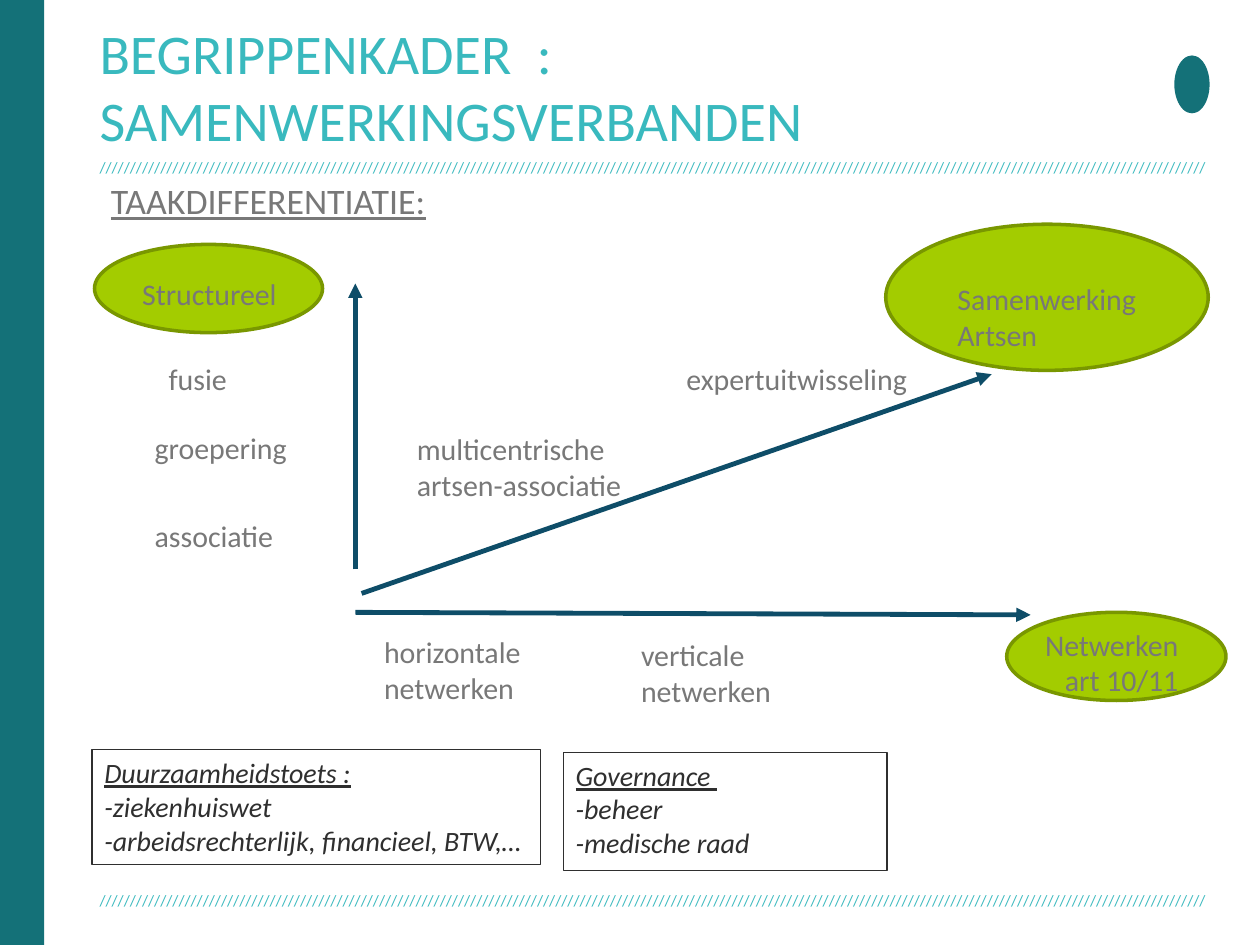
import pptx
import pptx.util
import pptx.dml.color
import pptx.enum.shapes
import pptx.enum.text
import pptx.oxml
import pptx.oxml.ns

Inches, Pt = pptx.util.Inches, pptx.util.Pt
SHAPE = pptx.enum.shapes.MSO_SHAPE
ANCHOR = pptx.enum.text.MSO_ANCHOR
ALIGN = pptx.enum.text.PP_ALIGN

COLORS = {"teal": "147178", "aqua": "39B9BE", "gray": "787878", "dark": "2F2F2F",
          "lime": "A3CC00", "olive": "799700", "navy": "0E4D68"}
FONT = "Calibri"
LABEL_SIZE = 17.1
HATCH = "/" * 182

# left, top, width, height
HATCH_ROWS = [(0.79, 7.07, 8.9, 0.3), (0.79, 1.25, 8.9, 0.25)]
HEADINGS = [
    ("BEGRIPPENKADER  : SAMENWERKINGSVERBANDEN", (0.79, 0.13, 8.35, 1.1),
     dict(size=32, color="aqua")),
    ("TAAKDIFFERENTIATIE:", (0.88, 1.15, 5.9, 0.88), dict(size=20.5, underline=True)),
]
ELLIPSES = [(7.99, 4.86, 1.74, 0.7), (0.75, 1.94, 1.81, 0.7), (7.03, 1.78, 2.56, 1.16)]
ARROWS = [
    ((2.82, 4.86), (8.18, 4.88)),
    ((2.82, 4.52), (2.82, 2.25)),
    ((2.87, 4.71), (7.87, 2.97)),
]
LABELS = [
    ("Structureel", (1.03, 2.14, 1.8, 0.39)),
    ("fusie", (1.24, 2.81, 0.92, 0.39)),
    ("groepering", (1.13, 3.36, 2.53, 0.39)),
    ("associatie", (1.13, 4.06, 1.27, 0.39)),
    ("horizontale netwerken", (2.95, 4.98, 1.68, 0.68)),
    ("verticale\nnetwerken", (4.99, 5, 2.56, 0.68)),
    ("multicentrische\nartsen-associatie", (3.21, 3.37, 2.53, 0.68)),
    ("expertuitwisseling", (5.35, 2.81, 2.53, 0.39)),
    ("Samenwerking\nArtsen", (7.5, 2.18, 2.09, 0.68)),
]
NETWORK_LABEL = ("Netwerken\nart 10/11", (8.03, 4.92, 1.42, 0.68))
NOTES = [
    ("Duurzaamheidstoets :\n-ziekenhuiswet\n-arbeidsrechterlijk, financieel, BTW,…",
     (0.73, 5.95, 3.56, 0.91)),
    ("Governance \n-beheer\n-medische raad", (4.47, 5.97, 2.57, 0.94)),
]


def rgb(name):
    return pptx.dml.color.RGBColor.from_string(COLORS[name])


def write(sp, text, size=LABEL_SIZE, color="gray", italic=False, underline=False,
          align=ALIGN.LEFT, anchor=ANCHOR.TOP, inset=True):
    """Fill a shape with one paragraph per line; underline marks the first only."""
    tf = sp.text_frame
    tf.word_wrap = True
    tf.vertical_anchor = anchor
    if not inset:
        tf.margin_left = tf.margin_right = tf.margin_top = tf.margin_bottom = 0
    for i, line in enumerate(text.split("\n")):
        p = tf.add_paragraph() if i else tf.paragraphs[0]
        p.alignment = align
        r = p.add_run()
        r.text = line
        r.font.name, r.font.size = FONT, Pt(size)
        r.font.color.rgb = rgb(color)
        r.font.italic = italic
        r.font.underline = underline and i == 0


def add_text(s, text, box, **fmt):
    write(s.shapes.add_textbox(*map(Inches, box)), text, **fmt)


def add_shape(s, kind, box, fill=None, line=None, width=0.75):
    sp = s.shapes.add_shape(kind, *map(Inches, box))
    sp.shadow.inherit = False
    if fill:
        sp.fill.solid()
        sp.fill.fore_color.rgb = rgb(fill)
    else:
        sp.fill.background()
    if line:
        sp.line.color.rgb = rgb(line)
        sp.line.width = Pt(width)
    else:
        sp.line.fill.background()
    return sp


def add_arrow(s, start, end):
    c = s.shapes.add_connector(pptx.enum.shapes.MSO_CONNECTOR.STRAIGHT,
                               *map(Inches, start + end))
    c.line.color.rgb = rgb("navy")
    c.line.width = Pt(2.75)
    tail = pptx.oxml.parse_xml(
        "<a:tailEnd %s type='triangle'/>" % pptx.oxml.ns.nsdecls("a"))
    c.line._get_or_add_ln().append(tail)
    c._element.spPr.append(
        pptx.oxml.parse_xml("<a:effectLst %s/>" % pptx.oxml.ns.nsdecls("a")))


def main():
    prs = pptx.Presentation()
    prs.slide_width, prs.slide_height = Inches(10), Inches(7.5)
    s = prs.slides.add_slide(prs.slide_layouts[6])

    add_shape(s, SHAPE.RECTANGLE, (0, 0, 0.35, 7.5), fill="teal")
    add_shape(s, SHAPE.OVAL, (9.32, 0.44, 0.28, 0.46), fill="teal")  # emblem
    for box in HATCH_ROWS:
        add_text(s, HATCH, box, size=9, color="aqua", inset=False)
    for text, box, fmt in HEADINGS:
        add_text(s, text, box, anchor=ANCHOR.MIDDLE, inset=False, **fmt)
    for box in ELLIPSES:
        add_shape(s, SHAPE.OVAL, box, fill="lime", line="olive", width=2)
    for start, end in ARROWS:
        add_arrow(s, start, end)
    for text, box in LABELS:
        add_text(s, text, box)
    add_text(s, *NETWORK_LABEL, align=ALIGN.RIGHT)
    for text, box in NOTES:
        sp = add_shape(s, SHAPE.RECTANGLE, box, line="dark")
        write(sp, text, size=16, color="dark", italic=True, underline=True)

    prs.save("out.pptx")


if __name__ == "__main__":
    main()
